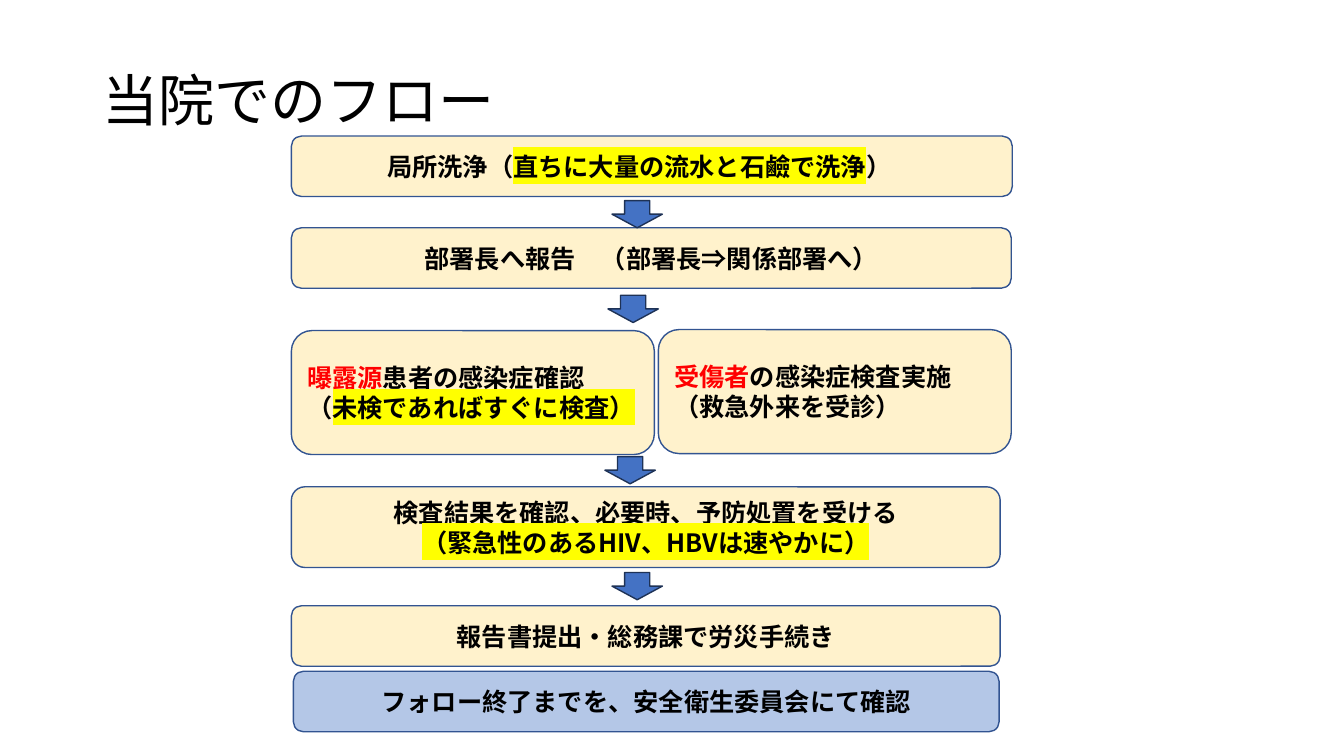
"""Builds the slide showing the hospital's exposure response flow."""
from lxml.etree import SubElement
from pptx import Presentation
from pptx.dml.color import RGBColor
from pptx.enum.shapes import MSO_SHAPE as SHAPE
from pptx.enum.text import MSO_ANCHOR as ANCHOR, PP_ALIGN as ALIGN
from pptx.oxml.ns import qn
from pptx.util import Inches, Pt

FONT = "Noto Sans CJK JP"
COLORS = {
    "step": "FFF2CC", "follow_up": "B4C7E7", "step_line": "325491",
    "arrow": "4472C4", "arrow_line": "1E3256",
    "text": "000000", "red": "FF0000", "marker": "FFFF00",
}
STEPS = [
    (2.89, 1.35, 7.15, 0.6, "step", ALIGN.CENTER,
     [[("局所洗浄（", "text"), ("直ちに大量の流水と石鹼で洗浄", "marker"), ("）　", "text")]]),
    (2.89, 2.26, 7.14, 0.6, "step", ALIGN.CENTER,
     [[("部署長へ報告　（部署長⇒関係部署へ）", "text")]]),
    (2.89, 3.28, 3.6, 1.23, "step", ALIGN.LEFT,
     [[("曝露源", "red"), ("患者の感染症確認", "text")],
      [("（", "text"), ("未検であればすぐに検査）", "marker")]]),
    (6.53, 3.27, 3.5, 1.23, "step", ALIGN.LEFT,
     [[("受傷者", "red"), ("の感染症検査実施", "text")],
      [("（救急外来を受診）", "text")]]),
    (2.89, 4.83, 7.03, 0.8, "step", ALIGN.CENTER,
     [[("検査結果を確認、必要時、予防処置を受ける", "text")],
      [("（緊急性のあるHIV、HBVは速やかに）", "marker")]]),
    (2.89, 6.01, 7.03, 0.6, "step", ALIGN.CENTER,
     [[("報告書提出・総務課で労災手続き", "text")]]),
    (2.91, 6.66, 7, 0.6, "follow_up", ALIGN.CENTER,
     [[("フォロー終了までを、安全衛生委員会にて確認", "text")]]),
]
ARROWS = [(6.07, 1.99), (6.03, 2.93), (6, 4.53), (6.07, 5.68)]


def rgb(name):
    return RGBColor.from_string(COLORS[name])


def format_run(r, size, bold, style="text"):
    marked = style == "marker"
    r.font.size, r.font.bold = Pt(size), bold
    r.font.color.rgb = rgb("text" if marked else style)
    r_pr = r.font._element
    if marked:
        highlight = SubElement(r_pr, qn("a:highlight"))
        SubElement(highlight, qn("a:srgbClr"), val=COLORS["marker"])
    for tag in ("a:latin", "a:ea"):
        SubElement(r_pr, qn(tag), typeface=FONT)


def add_filled(slide, kind, box, fill, line):
    sp = slide.shapes.add_shape(kind, *map(Inches, box))
    sp.shadow.inherit = False
    sp.fill.solid()
    sp.fill.fore_color.rgb = rgb(fill)
    sp.line.color.rgb = rgb(line)
    sp.line.width = Pt(1)
    return sp


def add_step(slide, left, top, width, height, fill, align, lines):
    sp = add_filled(slide, SHAPE.ROUNDED_RECTANGLE,
                    (left, top, width, height), fill, "step_line")
    tf = sp.text_frame
    tf.word_wrap = True
    tf.vertical_anchor = ANCHOR.MIDDLE
    for i, line in enumerate(lines):
        p = tf.add_paragraph() if i else tf.paragraphs[0]
        p.alignment = align
        for text, style in line:
            r = p.add_run()
            r.text = text
            format_run(r, 18, True, style)


def add_arrow(slide, left, top):
    add_filled(slide, SHAPE.DOWN_ARROW, (left, top, 0.5, 0.27), "arrow", "arrow_line")


def set_title(slide, text):
    title = slide.shapes.title
    title.left, title.top = Inches(0.92), Inches(0.3)
    title.width, title.height = Inches(4.39), Inches(1.45)
    tf = title.text_frame
    tf.text = text
    tf.vertical_anchor = ANCHOR.MIDDLE
    p = tf.paragraphs[0]
    p.alignment, p.line_spacing = ALIGN.LEFT, 0.9
    format_run(p.runs[0], 40, False)


def main():
    prs = Presentation()
    prs.slide_width, prs.slide_height = Inches(13.33), Inches(7.5)
    slide = prs.slides.add_slide(prs.slide_layouts[5])
    set_title(slide, "当院でのフロー")
    for step in STEPS:
        add_step(slide, *step)
    for arrow in ARROWS:
        add_arrow(slide, *arrow)
    prs.save("out.pptx")


if __name__ == "__main__":
    main()
